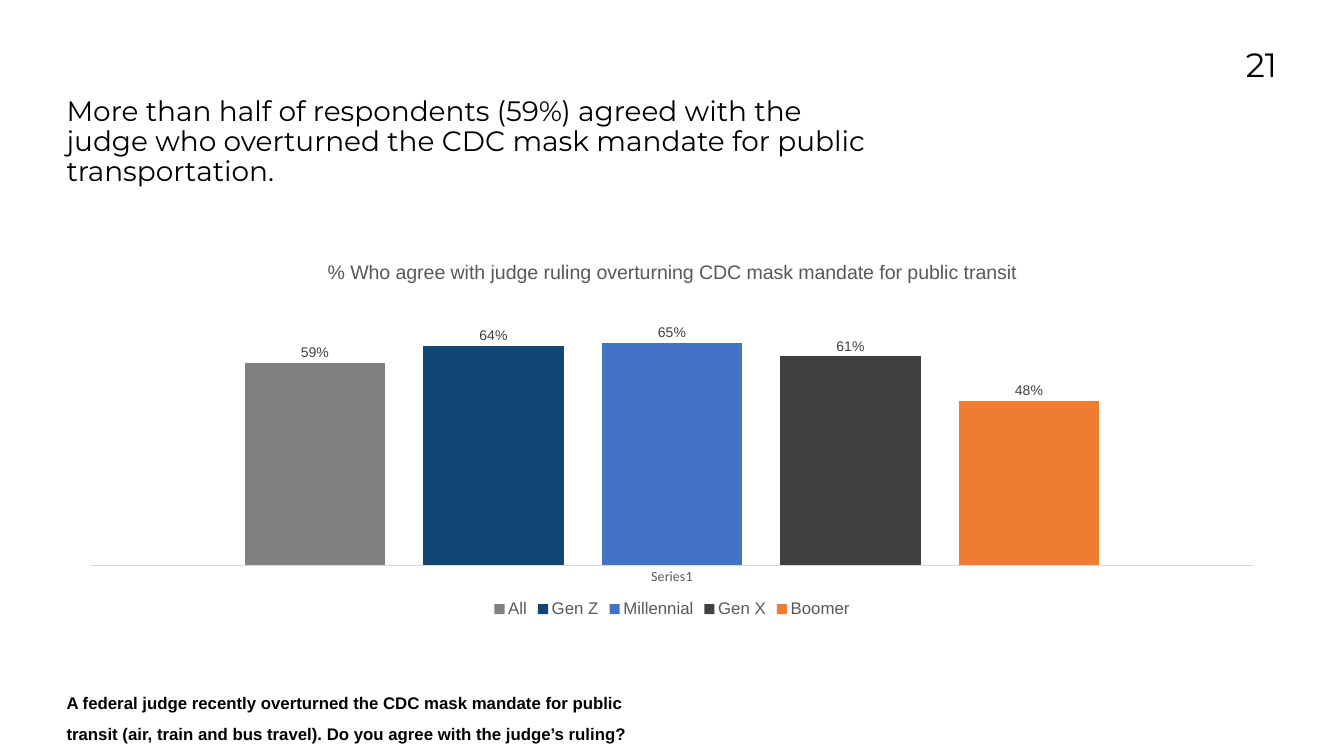
from lxml import etree
from pptx import Presentation
from pptx.chart.data import CategoryChartData
from pptx.dml.color import RGBColor
from pptx.enum.chart import XL_CHART_TYPE, XL_LABEL_POSITION, XL_LEGEND_POSITION, XL_TICK_MARK
from pptx.enum.text import MSO_ANCHOR, PP_ALIGN
from pptx.util import Inches, Pt

COLUMNS = XL_CHART_TYPE.COLUMN_CLUSTERED
OUTSIDE_END = XL_LABEL_POSITION.OUTSIDE_END
BOTTOM = XL_LEGEND_POSITION.BOTTOM
NO_TICKS = XL_TICK_MARK.NONE
TOP, LEFT, RIGHT = MSO_ANCHOR.TOP, PP_ALIGN.LEFT, PP_ALIGN.RIGHT
CHART_NAMESPACE = "http://schemas.openxmlformats.org/drawingml/2006/chart"
MARGIN = 1.32


def set_font(font, name, size, color, bold=False):
    values = {"name": name, "size": Pt(size), "bold": bold}
    for attribute, value in values.items():
        setattr(font, attribute, value)
    font.color.rgb = RGBColor.from_string(color)


def fill_text(shape, text, box, font, alignment=LEFT, line_spacing=1.0):
    shape.left, shape.top, shape.width, shape.height = map(Inches, box)
    frame = shape.text_frame
    frame_values = {"word_wrap": True, "vertical_anchor": TOP, "margin_left": 0,
                    "margin_top": 0, "margin_right": 0, "margin_bottom": 0}
    for attribute, value in frame_values.items():
        setattr(frame, attribute, value)
    frame.text = text
    paragraph = frame.paragraphs[0]
    paragraph.alignment = alignment
    paragraph.line_spacing = line_spacing
    set_font(paragraph.runs[0].font, *font)


presentation = Presentation()
presentation.slide_width = Inches(26.67)
presentation.slide_height = Inches(15)
slide = presentation.slides.add_slide(presentation.slide_layouts[5])

# Headline
fill_text(slide.shapes.title,
          "More than half of respondents (59%) agreed with the judge who overturned "
          "the CDC mask mandate for public transportation.",
          (MARGIN, 1.93, 16.01, 2.08), ("Montserrat", 40, "000000"), line_spacing=0.9)

# Page number
page_number = slide.shapes.add_textbox(0, 0, 0, 0)
fill_text(page_number, "21", (23.09, 0.88, 2.25, 1.64),
          ("Montserrat", 48, "000000"), alignment=RIGHT)

# Chart data: one series for each generation
generations = [
    ("All", 0.59, "808080"),
    ("Gen Z", 0.64, "104674"),
    ("Millennial", 0.65, "4472C4"),
    ("Gen X", 0.61, "404040"),
    ("Boomer", 0.48, "ED7D31"),
]
chart_data = CategoryChartData(number_format="0%")
chart_data.categories = ["Series1"]
for name, share, color in generations:
    chart_data.add_series(name, [share])

chart = slide.shapes.add_chart(COLUMNS, Inches(MARGIN), Inches(4.88), Inches(24.03),
                               Inches(7.46), chart_data).chart
set_font(chart.font, "Calibri", 10, "000000")

# Chart title and legend
chart.has_title = True
title_frame = chart.chart_title.text_frame
title_frame.text = ("% Who agree with judge ruling overturning CDC mask mandate "
                    "for public transit")
set_font(title_frame.paragraphs[0].runs[0].font, "Arial", 28, "595959")
chart.chart_title.include_in_layout = False
chart.has_legend = True
chart.legend.position = BOTTOM
chart.legend.include_in_layout = False
set_font(chart.legend.font, "Arial", 24, "595959")

# Axes
category_axis = chart.category_axis
category_axis.major_tick_mark = NO_TICKS
category_axis.format.line.color.rgb = RGBColor.from_string("D9D9D9")
category_axis.format.line.width = Pt(0.75)
set_font(category_axis.tick_labels.font, "Calibri", 20, "595959")
value_axis = chart.value_axis
axis_values = {"minimum_scale": 0, "maximum_scale": 0.8,
               "has_major_gridlines": False, "visible": False}
for attribute, value in axis_values.items():
    setattr(value_axis, attribute, value)

# Columns and their labels
plot = chart.plots[0]
plot.gap_width = 219
plot.overlap = -27
plot.vary_by_categories = False
for series, (name, share, color) in zip(plot.series, generations):
    series.format.fill.solid()
    series.format.fill.fore_color.rgb = RGBColor.from_string(color)
    labels = series.data_labels
    labels.show_value = True
    labels.position = OUTSIDE_END
    labels.number_format = "0%"
    labels.number_format_is_linked = False
    set_font(labels.font, "Arial", 20, "404040")

# Plot area as fractions of the chart frame
plot_area = chart.element.find(f".//{{{CHART_NAMESPACE}}}plotArea")
for layout in plot_area.findall(f"{{{CHART_NAMESPACE}}}layout"):
    plot_area.remove(layout)
layout = etree.Element(f"{{{CHART_NAMESPACE}}}layout")
manual_layout = etree.SubElement(layout, f"{{{CHART_NAMESPACE}}}manualLayout")
layout_values = {"layoutTarget": "inner", "xMode": "edge", "yMode": "edge",
                 "x": "0.02", "y": "0.12", "w": "0.96", "h": "0.73"}
for tag, value in layout_values.items():
    etree.SubElement(manual_layout, f"{{{CHART_NAMESPACE}}}{tag}", val=value)
plot_area.insert(0, layout)

# Survey question
question = slide.shapes.add_textbox(0, 0, 0, 0)
fill_text(question,
          "A federal judge recently overturned the CDC mask mandate for public transit "
          "(air, train and bus travel). Do you agree with the judge’s ruling?",
          (MARGIN, 13.55, 12.01, 0.65), ("Arial", 24, "000000", True), line_spacing=1.5)

presentation.save("out.pptx")
